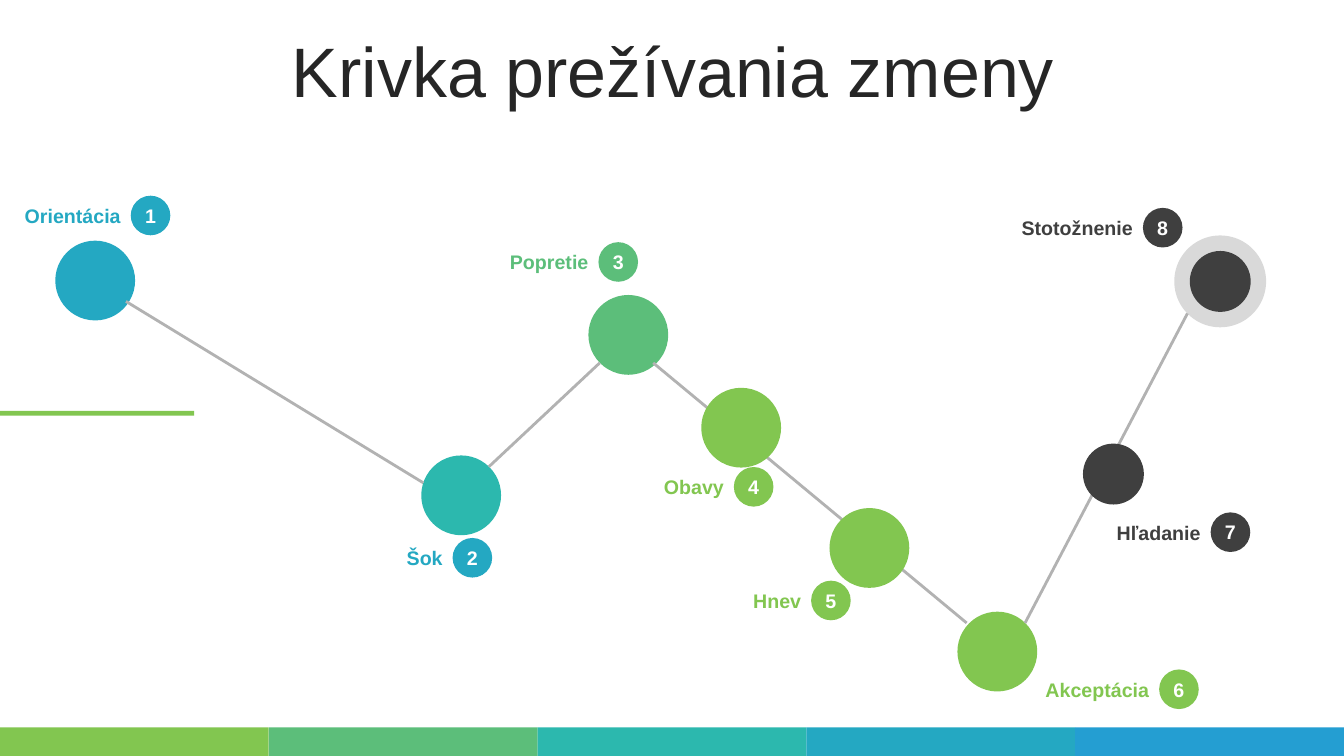
from pptx import Presentation
from pptx import util as u
from pptx.dml.color import RGBColor
from pptx.enum import shapes, text
from pptx.oxml.ns import qn
from lxml import etree

COLOURS = {
    "green": "82C650", "mint": "5CBE7A", "teal": "2CB8AE", "cyan": "24A8C2",
    "blue": "249ED2", "dark": "3F3F3F", "ring": "D9D9D9", "line": "B2B2B2",
    "title": "262626", "white": "FFFFFF",
}
WIDTH, HEIGHT = 960, 540
LARGE, SMALL, RING, BADGE = 57, 43.5, 65.6, 28.3
LABEL_WIDTH, LABEL_HEIGHT = 154, 24.2

# Centre x, centre y, diameter, colour
BACK_DOTS = [
    (68, 200.4, LARGE, "cyan"),
    (329.4, 353.8, LARGE, "teal"),
    (448.8, 239.2, LARGE, "mint"),
    (712.4, 465.4, LARGE, "green"),
    (871.6, 201, RING, "ring"),
    (871.6, 201, SMALL, "dark"),
]
FRONT_DOTS = [
    (529.4, 305.5, LARGE, "green"),
    (621, 391.4, LARGE, "green"),
    (795.3, 338.6, SMALL, "dark"),
]
SEGMENTS = [
    (90, 215.3, 302.4, 344.9),
    (349.2, 333.4, 428.4, 259.2),
    (690.5, 445, 466.6, 259.2),
    (732.2, 445, 848.2, 223.9),
]
# Label, badge left, badge top, colour
STAGES = [
    ("Orientácia", 93.4, 139.8, "cyan"),
    ("Šok", 323.3, 384.3, "cyan"),
    ("Popretie", 427.5, 173, "mint"),
    ("Obavy", 524.2, 333.6, "green"),
    ("Hnev", 579.4, 414.8, "green"),
    ("Akceptácia", 828, 478.2, "green"),
    ("Hľadanie", 864.8, 366, "dark"),
    ("Stotožnenie", 816.4, 148.5, "dark"),
]


def rgb(name):
    return RGBColor.from_string(COLOURS[name])


def write(shape, words, size=14, colour="white", bold=True, align="CENTER", spacing=None):
    frame = shape.text_frame
    frame.word_wrap = True
    frame.auto_size = text.MSO_AUTO_SIZE.NONE
    frame.vertical_anchor = text.MSO_ANCHOR.MIDDLE
    paragraph = frame.paragraphs[0]
    paragraph.alignment = text.PP_ALIGN[align]
    paragraph.line_spacing = spacing
    run = paragraph.add_run()
    run.text = words
    run.font.name = "Arial"
    run.font.size = u.Pt(size)
    run.font.bold = bold
    run.font.color.rgb = rgb(colour)


def add_filled(slide, kind, left, top, width, height, colour):
    shape = slide.shapes.add_shape(
        kind, u.Pt(left), u.Pt(top), u.Pt(width), u.Pt(height))
    shape.shadow.inherit = False
    shape.fill.solid()
    shape.fill.fore_color.rgb = rgb(colour)
    shape.line.fill.background()
    return shape


def add_decoration(slide, top, height):
    """Draw the colour strip along the bottom and the accent bar at the left."""
    strip = ["green", "mint", "teal", "cyan", "blue"]
    step = WIDTH / len(strip)
    for index, colour in enumerate(strip):
        add_filled(slide, shapes.MSO_SHAPE.RECTANGLE, index * step, top, step, height, colour)
    add_filled(slide, shapes.MSO_SHAPE.RECTANGLE, 0, 293.5, 138.7, 3.5, "green")


def add_title(slide, left, top, width, height):
    title = slide.shapes.title
    title.left, title.top = u.Pt(left), u.Pt(top)
    title.width, title.height = u.Pt(width), u.Pt(height)
    write(title, "Krivka prežívania zmeny", size=50, colour="title", bold=False, spacing=0.8)


def add_dots(slide, dots):
    for x, y, size, colour in dots:
        add_filled(slide, shapes.MSO_SHAPE.OVAL, x - size / 2, y - size / 2, size, size, colour)


def add_segment(slide, *ends):
    line = slide.shapes.add_connector(
        shapes.MSO_CONNECTOR.STRAIGHT, *(u.Pt(value) for value in ends))
    line.line.color.rgb = rgb("line")
    line.line.width = u.Pt(2)
    etree.SubElement(line._element.spPr, qn("a:effectLst"))


def add_curve(slide):
    add_dots(slide, BACK_DOTS)
    for segment in SEGMENTS:
        add_segment(slide, *segment)
    add_dots(slide, FRONT_DOTS)


def add_stage(slide, number, label, left, top, colour):
    """Draw a numbered badge with its label ending at the badge's left side."""
    width = min(LABEL_WIDTH, left)
    box = slide.shapes.add_textbox(
        u.Pt(left - width), u.Pt(top + (BADGE - LABEL_HEIGHT) / 2),
        u.Pt(width), u.Pt(LABEL_HEIGHT))
    write(box, label, colour=colour, align="RIGHT")
    badge = add_filled(slide, shapes.MSO_SHAPE.OVAL, left, top, BADGE, BADGE, colour)
    frame = badge.text_frame
    frame.margin_left = frame.margin_right = frame.margin_top = frame.margin_bottom = 0
    write(badge, str(number))


def main():
    presentation = Presentation()
    presentation.slide_width, presentation.slide_height = u.Pt(WIDTH), u.Pt(HEIGHT)
    slide = presentation.slides.add_slide(presentation.slide_layouts[5])
    add_decoration(slide, 519.6, HEIGHT - 519.6)
    add_title(slide, 25.2, 26.6, 911.5, 56.9)
    add_curve(slide)
    for number, stage in enumerate(STAGES, start=1):
        add_stage(slide, number, *stage)
    presentation.save("out.pptx")


if __name__ == "__main__":
    main()
